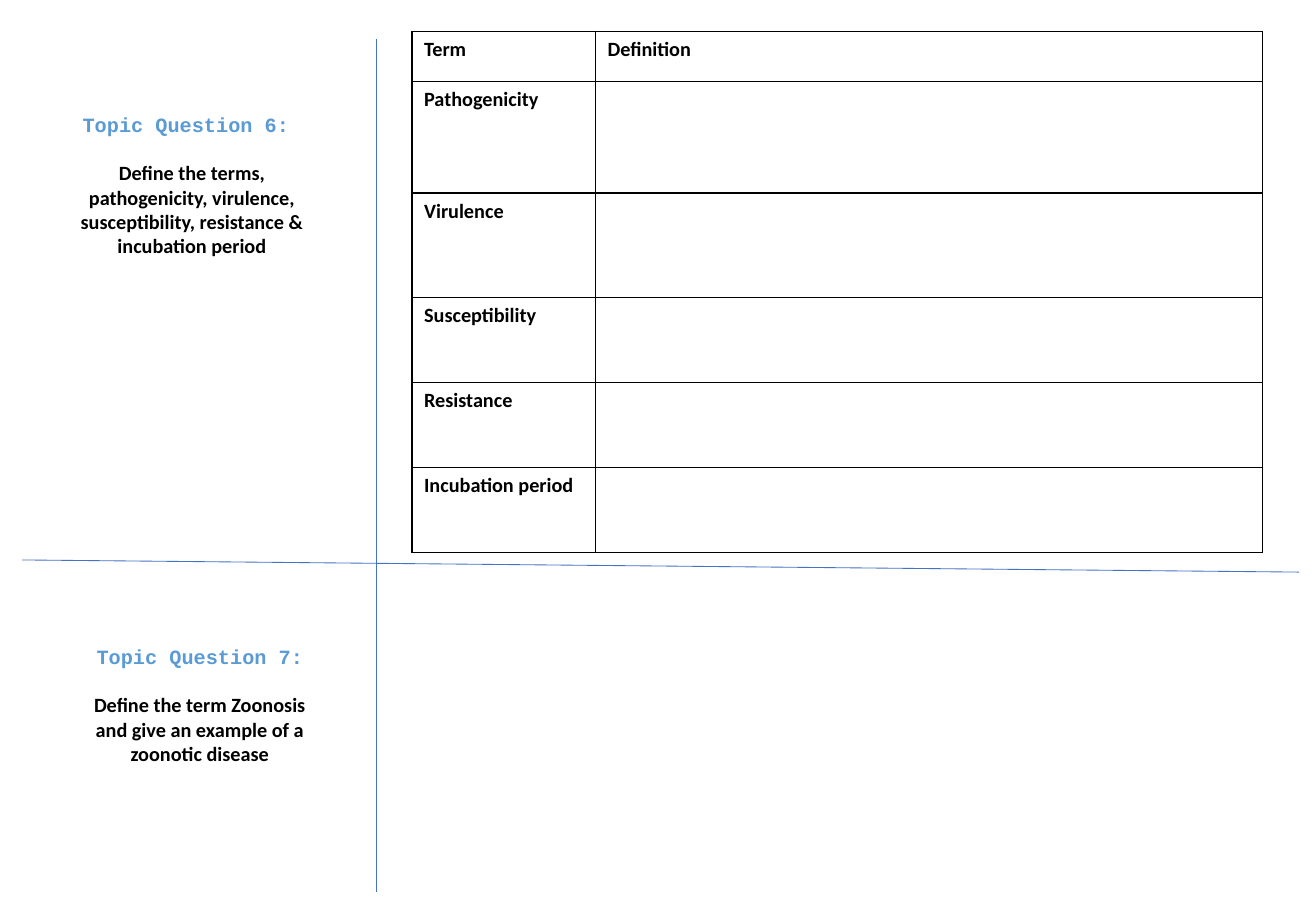
from lxml import etree
from pptx import Presentation
from pptx.dml.color import RGBColor
from pptx.enum import shapes, text
from pptx.oxml.ns import qn
from pptx.util import Inches, Pt

HUE = {"line": "4472C4", "head": "5B9BD5", "ink": "000000"}
TOPICS = [
    ((0.5, 1.25, 2.16, 0.75), "Topic Question 6: ",
     "Define the terms, pathogenicity, virulence, susceptibility, resistance & incubation period"),
    ((0.66, 5.53, 1.97, 0.75), "Topic Question 7: ",
     "Define the term Zoonosis and give an example of a zoonotic disease"),
]
RULES = [(3.1, 0.32, 3.1, 7.34), (0.18, 4.61, 10.69, 4.71)]
ROWS = [
    (0.41, "Term", "Definition"),
    (0.92, "Pathogenicity", ""),
    (0.86, "Virulence", ""),
    (0.7, "Susceptibility", ""),
    (0.7, "Resistance", ""),
    (0.7, "Incubation period", ""),
]
COLS = (1.51, 5.49)
LEFT, TOP = 3.39, 0.26


def style(par, face, hue):
    par.font.name = face
    par.font.size = Pt(12)
    par.font.bold = True
    par.font.color.rgb = RGBColor.from_string(HUE[hue])


def add_topic(slide, box, head, body):
    frame = slide.shapes.add_textbox(*map(Inches, box)).text_frame
    frame.word_wrap = True
    frame.auto_size = text.MSO_AUTO_SIZE.NONE
    frame.vertical_anchor = text.MSO_ANCHOR.MIDDLE
    frame.margin_bottom = Inches(0.25)
    first, second = frame.paragraphs[0], frame.add_paragraph()
    first.text, second.text = head, body
    first.space_after = Pt(14)
    style(first, "Courier New", "head")
    style(second, "Calibri", "ink")
    for par in (first, second):
        par.alignment = text.PP_ALIGN.CENTER


def add_rule(slide, ends):
    rule = slide.shapes.add_connector(shapes.MSO_CONNECTOR.STRAIGHT, *map(Inches, ends))
    rule.line.color.rgb = RGBColor.from_string(HUE["line"])
    rule.line.width = Pt(0.5)
    etree.SubElement(rule._element.spPr, qn("a:effectLst"))


def add_edges(cell):
    props = cell._tc.get_or_add_tcPr()
    for side in ("lnL", "lnR", "lnT", "lnB"):
        edge = etree.SubElement(props, qn("a:" + side), w=str(Pt(1)))
        fill = etree.SubElement(edge, qn("a:solidFill"))
        etree.SubElement(fill, qn("a:srgbClr"), val=HUE["ink"])


def add_terms(slide):
    size = (sum(COLS), sum(row[0] for row in ROWS))
    table = slide.shapes.add_table(
        len(ROWS), len(COLS), *map(Inches, (LEFT, TOP, *size))).table
    table.first_row = table.horz_banding = False
    for col, width in zip(table.columns, COLS):
        col.width = Inches(width)
    for row, (height, *words) in zip(table.rows, ROWS):
        row.height = Inches(height)
        for cell, word in zip(row.cells, words):
            cell.text = word
            style(cell.text_frame.paragraphs[0], "Calibri", "ink")
            add_edges(cell)
            cell.fill.background()


def main():
    deck = Presentation()
    deck.slide_width, deck.slide_height = Inches(10.83), Inches(7.5)
    slide = deck.slides.add_slide(deck.slide_layouts[6])
    for ends in RULES:
        add_rule(slide, ends)
    for topic in TOPICS:
        add_topic(slide, *topic)
    add_terms(slide)
    deck.save("out.pptx")


if __name__ == "__main__":
    main()
